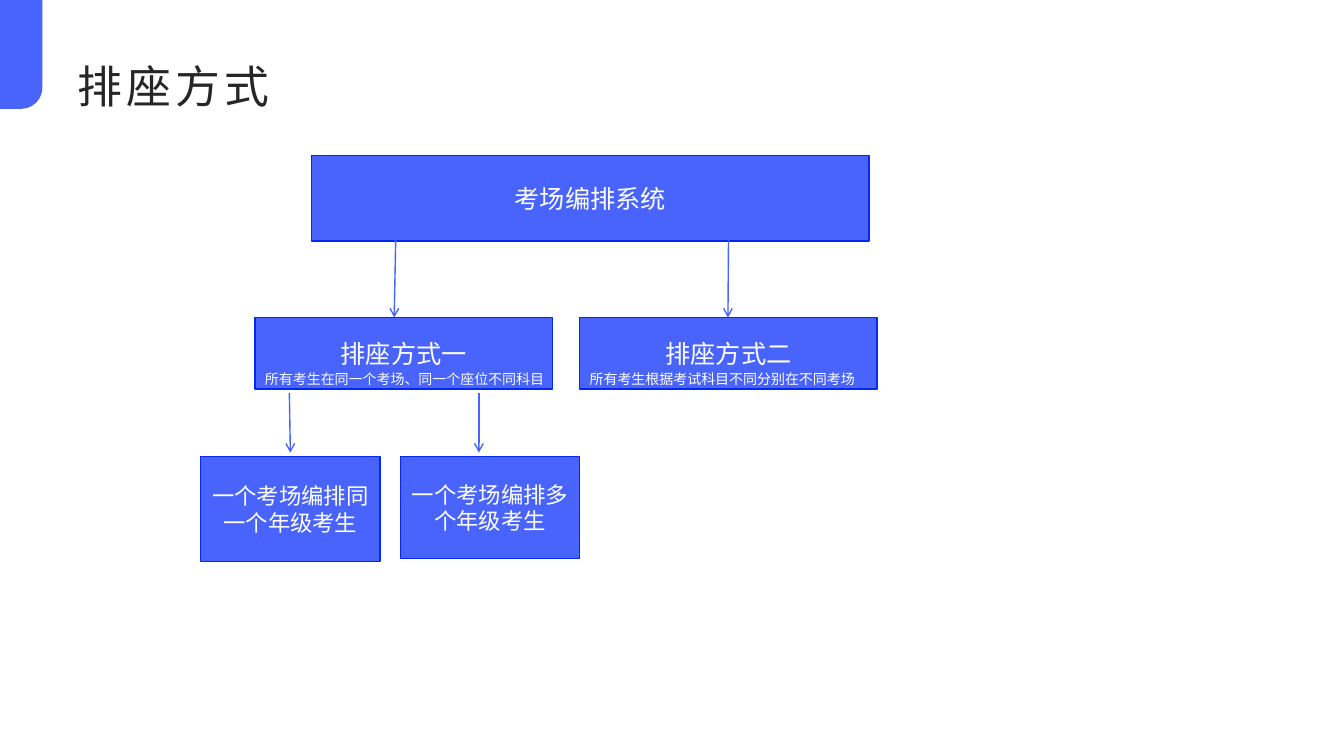
from pptx import Presentation
from pptx.dml.color import RGBColor
from pptx.enum.shapes import MSO_CONNECTOR as CONN, MSO_SHAPE as SHAPE
from pptx.enum.text import MSO_ANCHOR as ANCHOR, MSO_AUTO_SIZE as FIT, PP_ALIGN as ALIGN
from pptx.oxml.ns import qn
from pptx.util import Emu, Pt
from lxml.etree import SubElement

SCALE = 9144  # EMU per px, 100 px to the inch
BLUE, EDGE, WHITE = "4864FC", "0428EF", "FFFFFF"
ROW_TWO, ROW_THREE = 315, 453
LEFT, RIGHT = 253, 575


def px(*sizes):
    return [Emu(size * SCALE) for size in sizes]


def rgb(code):
    return RGBColor.from_string(code)


def style(frame, text, size, color=WHITE, name="Karla"):
    """Fill a text frame with one run and format it."""
    frame.text = text
    frame.word_wrap = True
    run = frame.paragraphs[0].runs[0]
    run.font.size = Pt(size)
    run.font.name = name
    run.font.color.rgb = rgb(color)
    return run


def add_tab(slide):
    """Draw the corner tab, turned so its round corner is at the lower right."""
    tab = slide.shapes.add_shape(SHAPE.ROUND_1_RECTANGLE, *px(-33, 33, 108, 42))
    tab.adjustments[0] = 0.5
    tab.rotation = 90
    tab.shadow.inherit = False
    tab.fill.solid()
    tab.fill.fore_color.rgb = rgb(BLUE)
    tab.line.fill.background()


def add_title(slide, text):
    title = slide.shapes.title
    title.left, title.top, title.width, title.height = px(67, 43, 1200, 74)
    frame = title.text_frame
    run = style(frame, text, 32, "262626", "Roboto")
    run.font._element.set("spc", "300")
    frame.vertical_anchor = ANCHOR.BOTTOM
    frame.paragraphs[0].alignment = ALIGN.LEFT


def add_box(slide, text, size, *place):
    box = slide.shapes.add_shape(SHAPE.RECTANGLE, *px(*place))
    box.shadow.inherit = False
    box.fill.solid()
    box.fill.fore_color.rgb = rgb(BLUE)
    box.line.color.rgb = rgb(EDGE)
    box.line.width = Pt(1)
    frame = box.text_frame
    style(frame, text, size)
    frame.vertical_anchor = ANCHOR.MIDDLE
    frame.paragraphs[0].alignment = ALIGN.CENTER


def add_note(slide, text, left, color):
    note = slide.shapes.add_textbox(*px(left, 363, 444, 27))
    style(note.text_frame, text, 10, color)
    note.text_frame.auto_size = FIT.SHAPE_TO_FIT_TEXT


def add_arrow(slide, *ends):
    arrow = slide.shapes.add_connector(CONN.STRAIGHT, *px(*ends))
    arrow.line.color.rgb = rgb(BLUE)
    arrow.line.width = Pt(1)
    SubElement(arrow.line._get_or_add_ln(), qn("a:tailEnd"), type="arrow")
    SubElement(arrow._element.spPr, qn("a:effectLst"))


def main():
    deck = Presentation()
    deck.slide_width, deck.slide_height = px(1333, 750)
    slide = deck.slides.add_slide(deck.slide_layouts[5])

    add_tab(slide)
    add_title(slide, "排座方式")

    add_box(slide, "考场编排系统", 18, 309, 154, 553, 85)
    add_arrow(slide, 393, 211, 391, ROW_TWO)
    add_arrow(slide, 723, 174, 722, ROW_TWO)

    for text, left in (("排座方式一", LEFT), ("排座方式二", RIGHT)):
        add_box(slide, text, 18, left, ROW_TWO, 295, 71)
    add_note(slide, "所有考生在同一个考场、同一个座位不同科目", LEFT, "FAFAFA")
    add_note(slide, "所有考生根据考试科目不同分别在不同考场", RIGHT, WHITE)

    for start, end in ((287, 288), (475, 475)):
        add_arrow(slide, start, 390, end, 449)
    add_box(slide, "一个考场编排同一个年级考生", 16, 199, ROW_THREE, 178, 104)
    add_box(slide, "一个考场编排多个年级考生", 16, 397, ROW_THREE, 178, 101)

    deck.save("out.pptx")


if __name__ == "__main__":
    main()
